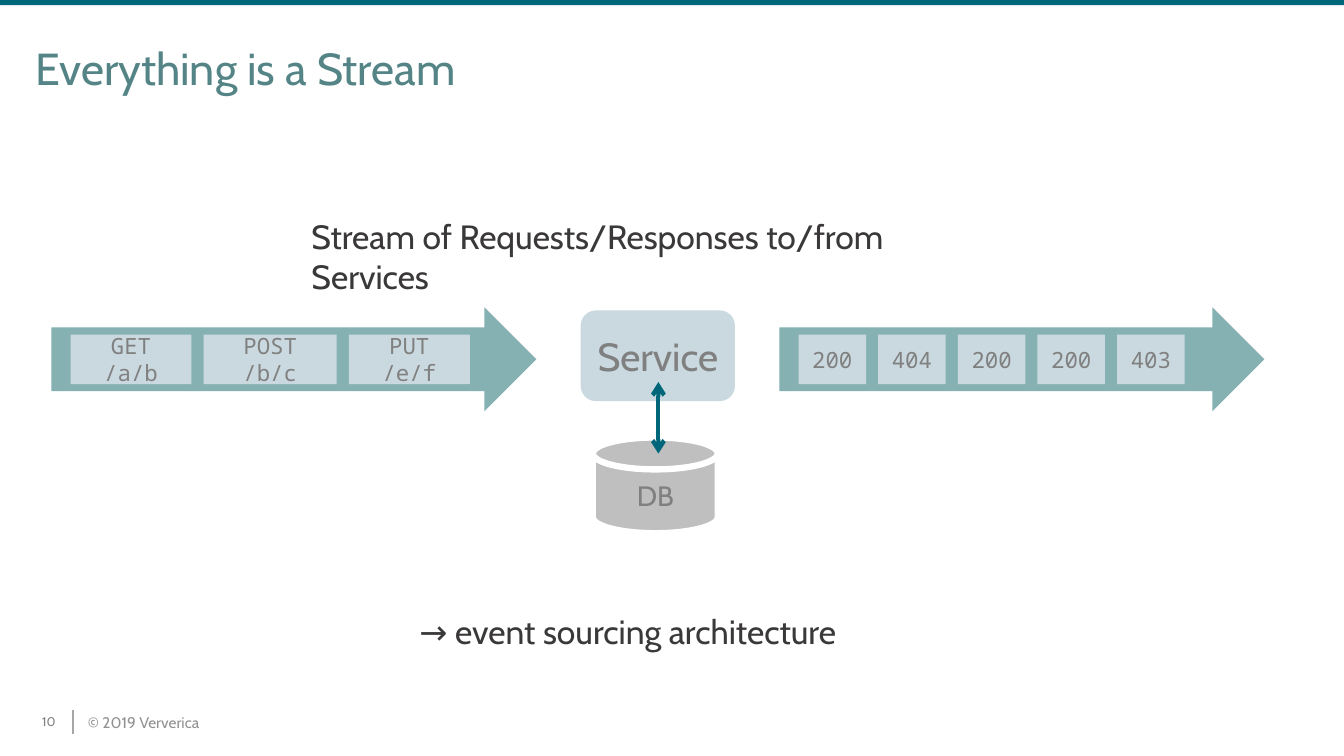
from dataclasses import dataclass

from lxml import etree
from pptx import Presentation
from pptx import util as u
from pptx.dml.color import RGBColor
from pptx.enum import shapes, text
from pptx.oxml import ns

KIND = shapes.MSO_SHAPE
ALIGN = text.PP_ALIGN
ANCHOR = text.MSO_ANCHOR


@dataclass(frozen=True)
class Theme:
    """Colours, fonts and type sizes of the slide."""
    accent: str = "006679"
    heading: str = "548486"
    stream: str = "85B1B3"
    panel: str = "CAD9DF"
    store: str = "BFBFBF"
    body: str = "3A3838"
    label: str = "808080"
    footer: str = "919191"
    rule: str = "A6A6A6"
    white: str = "FFFFFF"
    sans: str = "Cabin"
    mono: str = "Noto Sans Mono"
    title_size: int = 32
    service_size: int = 28
    body_size: int = 24
    store_size: int = 20
    event_size: int = 16
    footer_size: int = 11
    number_size: int = 9


class StreamSlide:
    """Draws elements on one slide in one theme."""

    def __init__(self, deck, theme):
        self.theme = theme
        self.slide = deck.slides.add_slide(deck.slide_layouts[6])

    def caption(self, frame, words, size, color, font=None, align=ALIGN.LEFT, anchor=ANCHOR.TOP):
        """Fill a text frame with one formatted paragraph."""
        frame.text = words
        frame.word_wrap = True
        frame.vertical_anchor = anchor
        paragraph = frame.paragraphs[0]
        paragraph.alignment = align
        run = paragraph.runs[0]
        run.font.size = u.Pt(size)
        run.font.name = font or self.theme.sans
        run.font.color.rgb = RGBColor.from_string(color)

    def label(self, box, words, size, color, inset=(0, 0), **style):
        """Add a text box with horizontal and vertical insets."""
        frame = self.slide.shapes.add_textbox(*map(u.Inches, box)).text_frame
        frame.margin_left = frame.margin_right = u.Inches(inset[0])
        frame.margin_top = frame.margin_bottom = u.Inches(inset[1])
        self.caption(frame, words, size, color, **style)

    def block(self, kind, box, fill, edge=None, words=None, size=None, font=None, anchor=ANCHOR.MIDDLE):
        """Add a filled shape with an optional edge and centred caption."""
        shape = self.slide.shapes.add_shape(kind, *map(u.Inches, box))
        shape.shadow.inherit = False
        shape.fill.solid()
        shape.fill.fore_color.rgb = RGBColor.from_string(fill)
        if edge:
            shape.line.color.rgb = RGBColor.from_string(edge)
            shape.line.width = u.Pt(4.5)
        else:
            shape.line.fill.background()
        if words:
            self.caption(shape.text_frame, words, size, self.theme.label, font, ALIGN.CENTER, anchor)
        return shape

    def line(self, start, end, color, width, arrows=False):
        """Add a straight line, with arrowheads at both ends on request."""
        points = map(u.Inches, (*start, *end))
        connector = self.slide.shapes.add_connector(shapes.MSO_CONNECTOR.STRAIGHT, *points)
        connector.line.color.rgb = RGBColor.from_string(color)
        connector.line.width = u.Pt(width)
        properties = connector._element.spPr
        if arrows:
            outline = properties.find(ns.qn("a:ln"))
            for tag in ("a:headEnd", "a:tailEnd"):
                etree.SubElement(outline, ns.qn(tag), type="arrow")
        etree.SubElement(properties, ns.qn("a:effectLst"))

    def stream(self, left, events):
        """Add a wide arrow carrying evenly spaced (caption, width) events."""
        arrow = self.block(KIND.RIGHT_ARROW, (left, 3.05, 4.81, 1.03), self.theme.stream)
        arrow.adjustments[0] = 0.615
        arrow.adjustments[1] = 0.5
        event_left = left + 0.19
        for words, width in events:
            self.block(KIND.RECTANGLE, (event_left, 3.32, width, 0.49), self.theme.panel,
                       words=words, size=self.theme.event_size, font=self.theme.mono)
            event_left += width + 0.12


def main():
    """Build and save the slide."""
    deck = Presentation()
    deck.slide_width, deck.slide_height = u.Inches(13.33), u.Inches(7.5)
    theme = Theme()
    page = StreamSlide(deck, theme)

    page.block(KIND.RECTANGLE, (0, 0, 13.33, 0.05), theme.accent)
    centred = {"align": ALIGN.CENTER, "anchor": ANCHOR.MIDDLE}
    page.label((0.86, 7.07, 1.13, 0.19), "© 2019 Ververica", theme.footer_size, theme.footer, **centred)
    page.line((0.72, 7.04), (0.72, 7.28), theme.rule, 1.5)
    page.label((0.37, 7.08, 0.23, 0.15), "10", theme.number_size, theme.label, **centred)
    page.label((0.35, 0.4, 12.62, 0.54), "Everything is a Stream", theme.title_size, theme.heading)

    statements = (
        ((3.01, 2.1, 6.83, 0.48), "Stream of Requests/Responses to/from Services"),
        ((4.08, 6.02, 4.53, 0.48), "→ event sourcing architecture"),
    )
    for box, words in statements:
        page.label(box, words, theme.body_size, theme.body, inset=(0.08, 0.04))

    page.block(KIND.ROUNDED_RECTANGLE, (5.76, 3.08, 1.53, 0.9), theme.panel,
               words="Service", size=theme.service_size)
    page.block(KIND.FLOWCHART_MAGNETIC_DISK, (5.88, 4.34, 1.24, 0.95), theme.store, edge=theme.white,
               words="DB", size=theme.store_size, anchor=ANCHOR.BOTTOM)
    page.line((6.53, 3.79), (6.53, 4.5), theme.accent, 3, arrows=True)

    page.stream(0.51, (("GET /a/b", 1.2), ("POST /b/c", 1.32), ("PUT /e/f", 1.2)))
    page.stream(7.73, [(status, 0.67) for status in ("200", "404", "200", "200", "403")])
    deck.save("out.pptx")


if __name__ == "__main__":
    main()
